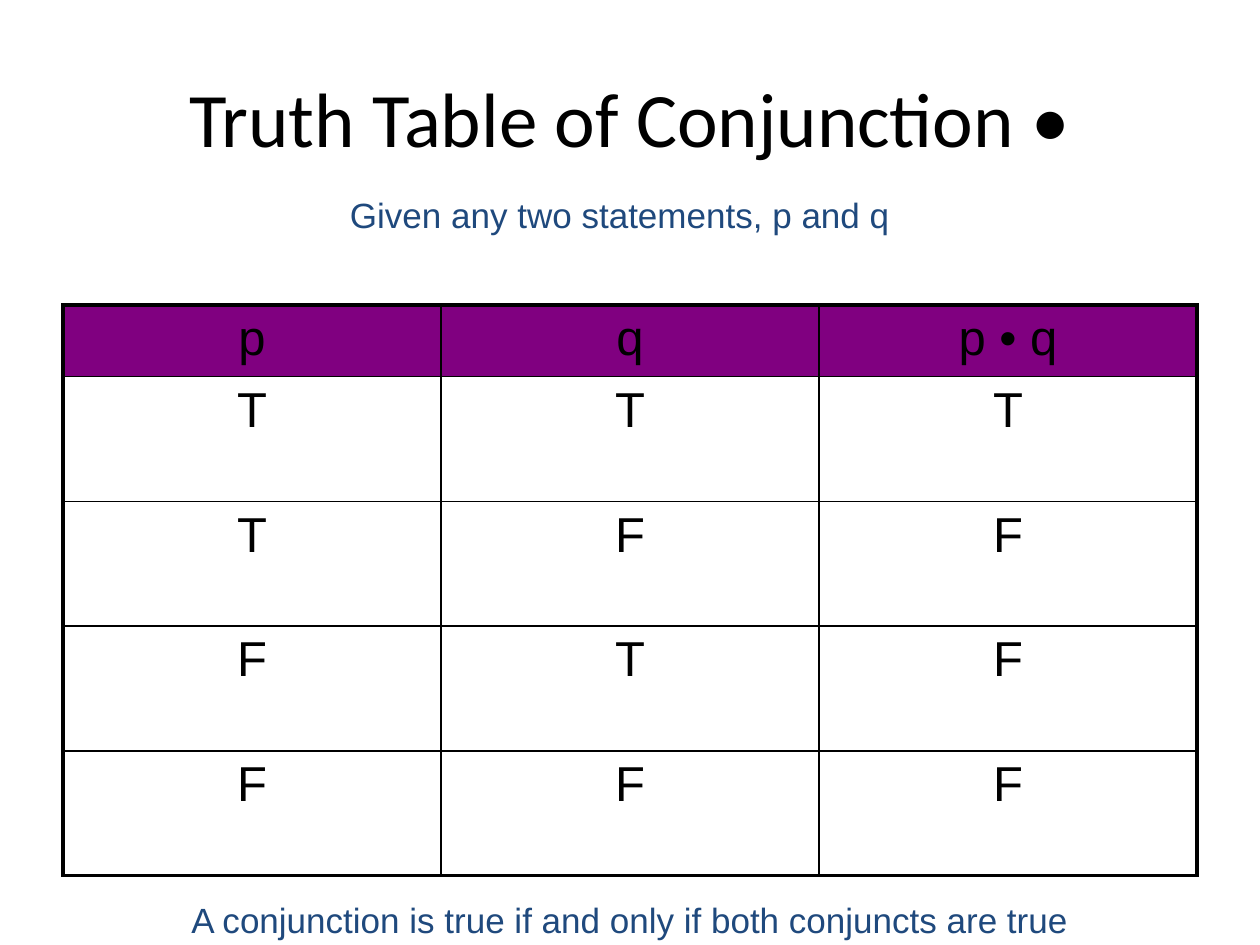
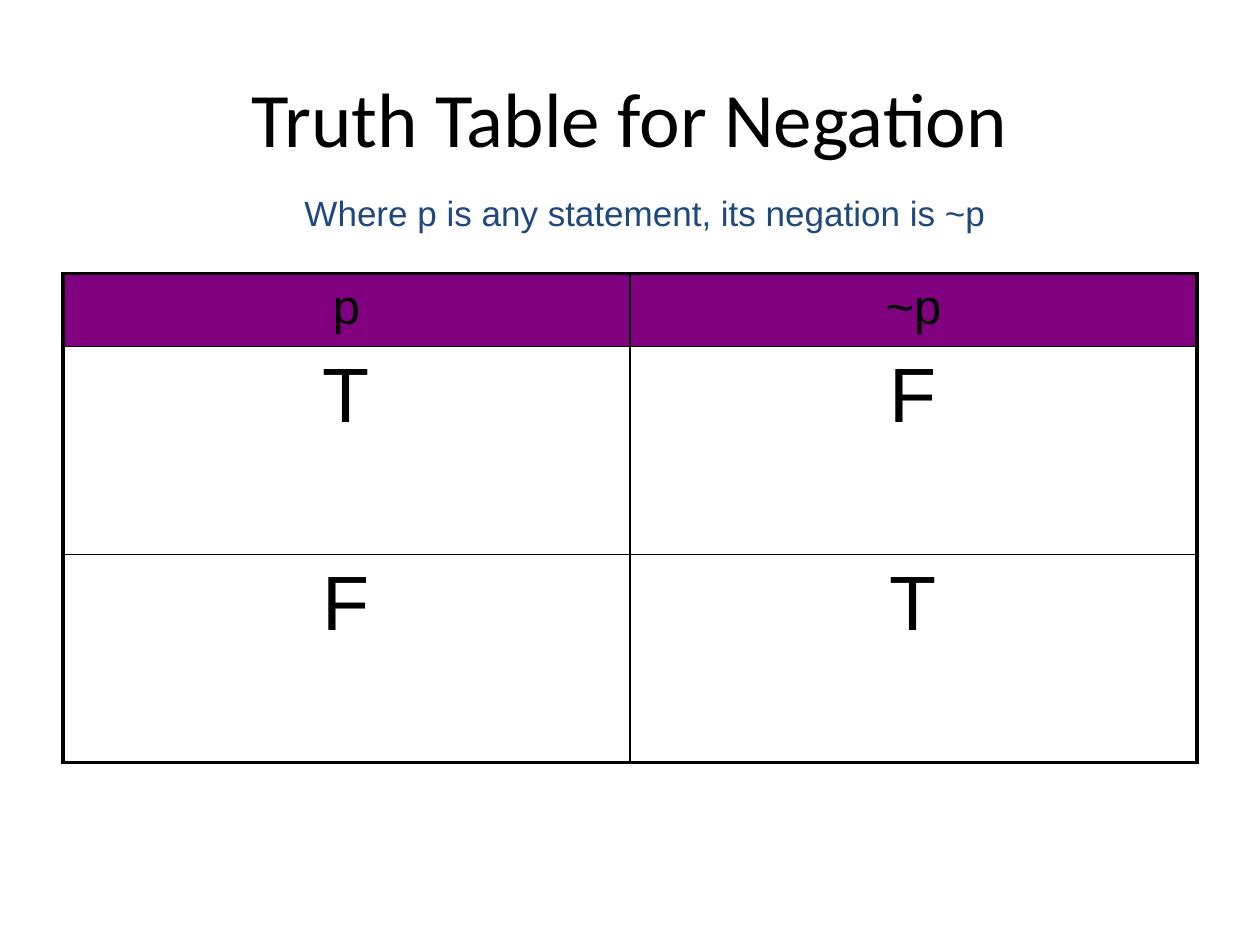
from dataclasses import dataclass

from lxml import etree
from pptx import Presentation
from pptx.dml.color import RGBColor
from pptx.enum.text import MSO_ANCHOR as Anchor, PP_ALIGN as Align
from pptx.oxml.ns import qn
from pptx.util import Inches, Pt


@dataclass(frozen=True)
class Theme:
    ink: str = "000000"
    note: str = "1F497D"
    header: str = "800080"
    title_font: str = "Calibri"
    body_font: str = "Arial"
    title_size: int = 44
    header_size: int = 28
    note_size: int = 20
    outer_line: float = 2.25
    inner_line: float = 1
    space_before: int = 20  # percent of a line


THEME = Theme()
TITLE_BOX = (0.5, 0.3, 9, 1.25)
TABLE_LEFT, TABLE_WIDTH = 0.5, 9

SLIDES = [
    {
        "title": "Truth Table of Conjunction •",
        "rows": [
            ("p", "q", "p • q"),
            ("T", "T", "T"),
            ("T", "F", "F"),
            ("F", "T", "F"),
            ("F", "F", "F"),
        ],
        "top": 2.42,
        "header_height": 0.57,
        "row_height": 0.99,
        "value_size": 28,
        "notes": [
            ("Given any two statements, p and q", (0.42, 1.5, 9, 0.41)),
            ("A conjunction is true if and only if both conjuncts are true",
             (0.5, 7.09, 9, 0.41)),
        ],
    },
    {
        "title": "Truth Table for Negation",
        "rows": [("p", "~p"), ("T", "F"), ("F", "T")],
        "top": 2.17,
        "header_height": 0.58,
        "row_height": 1.65,
        "value_size": 44,
        "notes": [
            ("Where p is any statement, its negation is ~p",
             (0.58, 1.5, 9.08, 0.38)),
        ],
    },
]


def write(frame, text, font, size, color):
    frame.text = text
    para = frame.paragraphs[0]
    para.alignment = Align.CENTER
    para.font.name = font
    para.font.size = Pt(size)
    para.font.bold = False
    para.font.color.rgb = RGBColor.from_string(color)
    return para


def add_title(page, text):
    title = page.shapes.title
    title.left, title.top, title.width, title.height = map(Inches, TITLE_BOX)
    title.text_frame.vertical_anchor = Anchor.MIDDLE
    write(title.text_frame, text, THEME.title_font, THEME.title_size, THEME.ink)


def add_note(page, text, place):
    frame = page.shapes.add_textbox(*map(Inches, place)).text_frame
    frame.word_wrap = True
    frame.vertical_anchor = Anchor.MIDDLE
    write(frame, text, THEME.body_font, THEME.note_size, THEME.note)


def set_borders(cell, outer_sides):
    """Draw all four sides, heavier on those at the table's edge."""
    properties = cell._tc.get_or_add_tcPr()
    for side in "LRTB":
        weight = THEME.outer_line if side in outer_sides else THEME.inner_line
        line = etree.SubElement(properties, qn(f"a:ln{side}"), w=str(Pt(weight)))
        fill = etree.SubElement(line, qn("a:solidFill"))
        etree.SubElement(fill, qn("a:srgbClr"), val=THEME.ink)


def set_space_before(para, percent):
    properties = para._p.get_or_add_pPr()
    space = etree.Element(qn("a:spcBef"))
    etree.SubElement(space, qn("a:spcPct"), val=str(percent * 1000))
    properties.insert(0, space)


def add_truth_table(page, content):
    rows = content["rows"]
    row_count, column_count = len(rows), len(rows[0])
    heights = [content["header_height"]] + [content["row_height"]] * (row_count - 1)
    table = page.shapes.add_table(
        row_count, column_count, Inches(TABLE_LEFT), Inches(content["top"]),
        Inches(TABLE_WIDTH), Inches(sum(heights))).table
    table.first_row = table.horz_banding = False
    for column in table.columns:
        column.width = Inches(TABLE_WIDTH / column_count)

    for r, (values, height) in enumerate(zip(rows, heights)):
        table.rows[r].height = Inches(height)
        size = content["value_size"] if r else THEME.header_size
        for c, value in enumerate(values):
            cell = table.cell(r, c)
            edges = {"L": c == 0, "R": c == column_count - 1,
                     "T": r == 0, "B": r == row_count - 1}
            set_borders(cell, [side for side, outer in edges.items() if outer])
            if r == 0:
                cell.fill.solid()
                cell.fill.fore_color.rgb = RGBColor.from_string(THEME.header)
            else:
                cell.fill.background()
            para = write(cell.text_frame, value, THEME.body_font, size, THEME.ink)
            set_space_before(para, THEME.space_before)


def main():
    deck = Presentation()
    deck.slide_width, deck.slide_height = Inches(10), Inches(7.5)
    title_only = deck.slide_layouts[5]
    for content in SLIDES:
        page = deck.slides.add_slide(title_only)
        add_title(page, content["title"])
        add_truth_table(page, content)
        for text, place in content["notes"]:
            add_note(page, text, place)
    deck.save("out.pptx")


if __name__ == "__main__":
    main()
